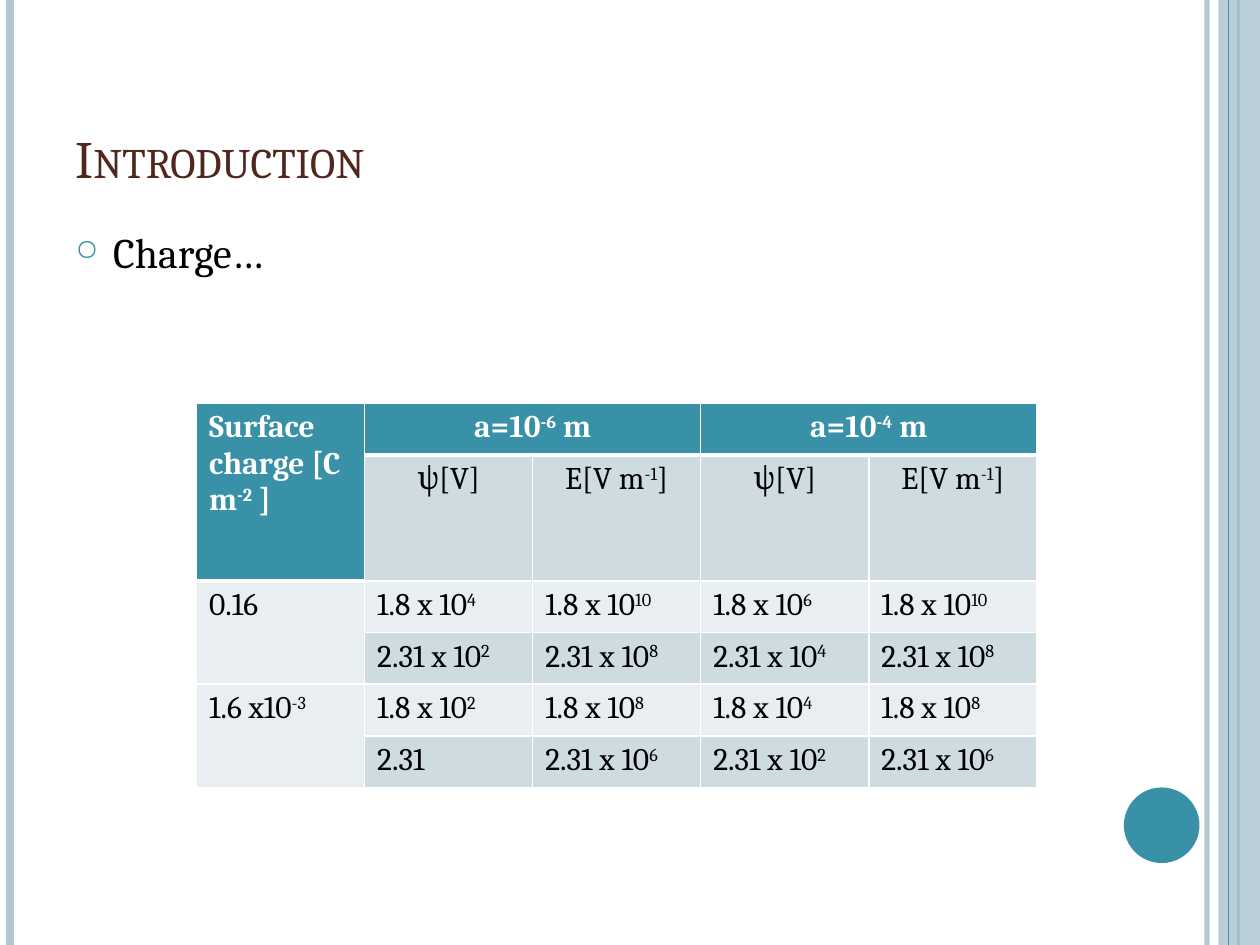
from dataclasses import dataclass

from lxml import etree
from pptx import Presentation
from pptx.dml.color import RGBColor
from pptx.enum.shapes import MSO_CONNECTOR, MSO_SHAPE
from pptx.enum.text import MSO_ANCHOR, PP_ALIGN
from pptx.oxml import parse_xml
from pptx.oxml.ns import nsdecls, qn
from pptx.util import Inches, Pt

STRAIGHT = MSO_CONNECTOR.STRAIGHT
RECTANGLE, OVAL = MSO_SHAPE.RECTANGLE, MSO_SHAPE.OVAL
CENTER, LEFT = PP_ALIGN.CENTER, PP_ALIGN.LEFT
BOTTOM = MSO_ANCHOR.BOTTOM


@dataclass(frozen=True)
class Theme:
    font: str = "Cambria"
    teal: str = "3891A7"
    pale: str = "AFC7D0"
    brown: str = "4F271C"
    black: str = "000000"
    white: str = "FFFFFF"
    band_dark: str = "CEDCE1"
    band_light: str = "E8EEF1"
    title_size: int = 30
    body_size: int = 24
    table_size: int = 18


THEME = Theme()


def style_run(run, size, color, bold=False):
    run.font.name = THEME.font
    run.font.size = Pt(size)
    run.font.bold = bold
    run.font.color.rgb = RGBColor.from_string(color)


def set_opacity(fill_parent, percent):
    color = next(fill_parent.iter(qn("a:srgbClr")))
    etree.SubElement(color, qn("a:alpha")).set("val", str(percent * 1000))


prs = Presentation()
prs.slide_width, prs.slide_height = Inches(10), Inches(7.5)
slide = prs.slides.add_slide(prs.slide_layouts[6])
shapes = slide.shapes

# Vertical stripes: x, colour, width, opacity; the band lies under the last one
stripes = [
    (9.58, THEME.pale, 3, 93),
    (0.08, THEME.pale, 4.5, 100),
    (9.83, THEME.teal, 1.5, 100),
    (9.75, THEME.teal, 0.75, 100),
]
for x, color, width, opacity in stripes:
    if x == 9.75:
        band = shapes.add_shape(RECTANGLE, Inches(9.67), 0, Inches(0.33), Inches(7.5))
        band.shadow.inherit = False
        band.fill.solid()
        band.fill.fore_color.rgb = RGBColor.from_string(THEME.pale)
        band.line.fill.background()
        set_opacity(band.fill._xPr, 87)
    stripe = shapes.add_connector(STRAIGHT, Inches(x), 0, Inches(x), Inches(7.5))
    stripe.line.color.rgb = RGBColor.from_string(color)
    stripe.line.width = Pt(width)
    if opacity < 100:
        set_opacity(stripe.line._ln, opacity)
    etree.SubElement(stripe._element.spPr, qn("a:effectLst"))

# Page number disc
disc = shapes.add_shape(OVAL, Inches(8.92), Inches(6.25), Inches(0.6), Inches(0.6))
disc.shadow.inherit = False
disc.fill.solid()
disc.fill.fore_color.rgb = RGBColor.from_string(THEME.teal)
disc.line.fill.background()

# Title
title = shapes.add_textbox(Inches(0.5), Inches(0.3), Inches(8.17), Inches(1.25))
title.text_frame.word_wrap = True
title.text_frame.vertical_anchor = BOTTOM
title.text_frame.text = "Introduction"
title_run = title.text_frame.paragraphs[0].runs[0]
style_run(title_run, THEME.title_size, THEME.brown)
title_run._r.get_or_add_rPr().set("cap", "small")

# Bullet point
body = shapes.add_textbox(Inches(0.5), Inches(1.75), Inches(8.17), Inches(0.67))
body.text_frame.word_wrap = True
body.text_frame.text = "Charge…"
point = body.text_frame.paragraphs[0]
point.space_before = Pt(6)
style_run(point.runs[0], THEME.body_size, THEME.black)
point_props = point._p.get_or_add_pPr()
point_props.set("marL", str(Inches(0.3)))
point_props.set("indent", str(Inches(-0.3)))
for bullet_xml in (
    f'<a:buClr {nsdecls("a")}><a:srgbClr val="{THEME.teal}"/></a:buClr>',
    f'<a:buSzPct {nsdecls("a")} val="70000"/>',
    f'<a:buChar {nsdecls("a")} char="○"/>',
):
    point_props.append(parse_xml(bullet_xml))

# Table of surface charges; text between carets is superscript
rows = [
    ["Surface charge [C m^-2^ ]", "a=10^-6^ m", "", "a=10^-4^ m", ""],
    ["", "ψ[V]", "E[V m^-1^]", "ψ[V]", "E[V m^-1^]"],
    ["0.16", "1.8 x 10^4", "1.8 x 10^10", "1.8 x 10^6", "1.8 x 10^10"],
    ["", "2.31 x 10^2", "2.31 x 10^8", "2.31 x 10^4", "2.31 x 10^8"],
    ["1.6 x10^-3", "1.8 x 10^2", "1.8 x 10^8", "1.8 x 10^4", "1.8 x 10^8"],
    ["", "2.31", "2.31 x 10^6", "2.31 x 10^2", "2.31 x 10^6"],
]
charges = shapes.add_table(
    len(rows), len(rows[0]), Inches(1.56), Inches(3.2), Inches(6.67), Inches(2.46)
).table
for column in charges.columns:
    column.width = Inches(6.67 / len(rows[0]))
for row in charges.rows:
    row.height = Inches(0.41)
for top, left, bottom, right in [
    (0, 0, 1, 0), (0, 1, 0, 2), (0, 3, 0, 4), (2, 0, 3, 0), (4, 0, 5, 0)
]:
    charges.cell(top, left).merge(charges.cell(bottom, right))

for r, texts in enumerate(rows):
    for c, text in enumerate(texts):
        cell = charges.cell(r, c)
        is_header = r == 0 or (r == 1 and c == 0)
        below_header = (r == 1 and c > 0) or (r == 2 and c == 0)

        # Fill
        if is_header:
            fill = THEME.teal
        elif c == 0 or r % 2 == 0:
            fill = THEME.band_light
        else:
            fill = THEME.band_dark
        cell.fill.solid()
        cell.fill.fore_color.rgb = RGBColor.from_string(fill)

        # Borders, thick under the header
        widths = {"L": 1, "R": 1, "T": 3 if below_header else 1, "B": 3 if is_header else 1}
        for position, (side, width) in enumerate(widths.items()):
            cell._tc.get_or_add_tcPr().insert(position, parse_xml(
                f'<a:ln{side} {nsdecls("a")} w="{Pt(width)}"><a:solidFill>'
                f'<a:srgbClr val="{THEME.white}"/></a:solidFill></a:ln{side}>'
            ))

        # Text
        if not text:
            continue
        paragraph = cell.text_frame.paragraphs[0]
        paragraph.alignment = CENTER if r < 2 and c > 0 else LEFT
        for part, piece in enumerate(text.split("^")):
            run = paragraph.add_run()
            run.text = piece
            style_run(run, THEME.table_size, THEME.white if is_header else THEME.black, is_header)
            if part % 2:
                run._r.get_or_add_rPr().set("baseline", "30000")

prs.save("out.pptx")
